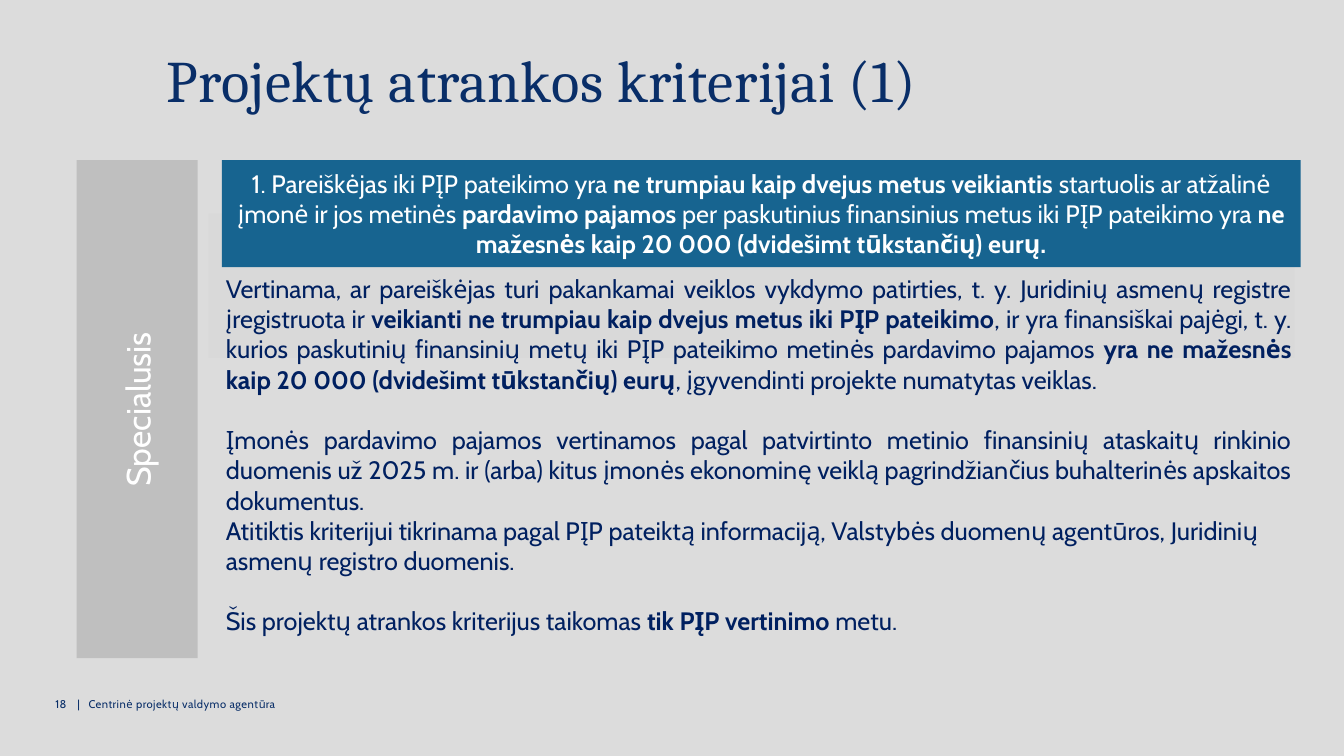
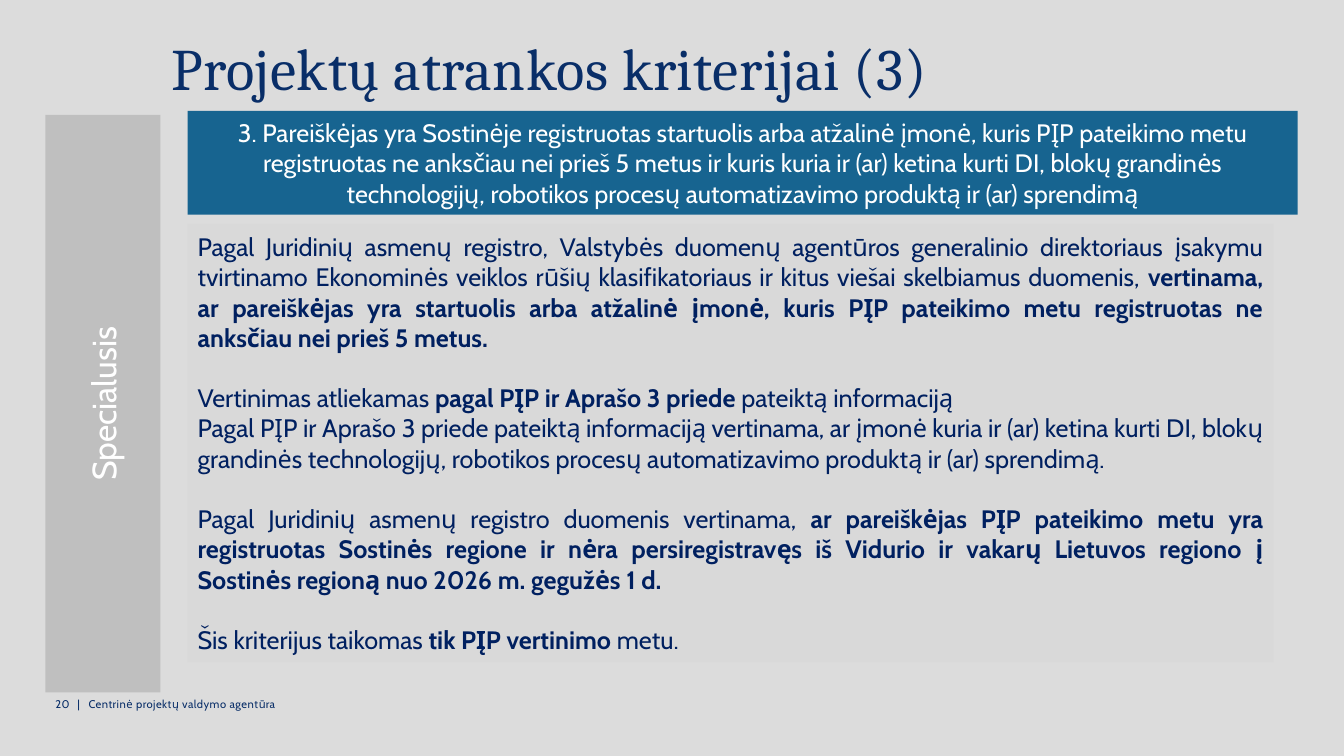
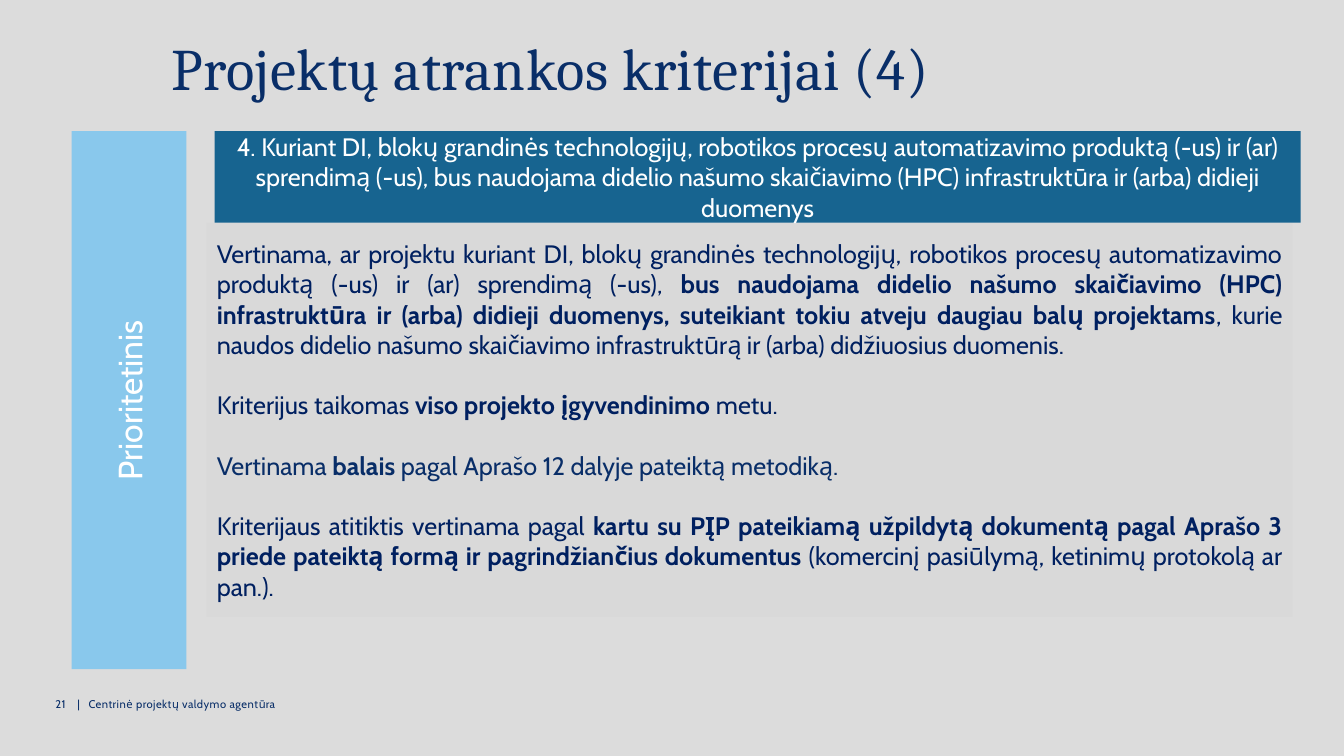
from dataclasses import dataclass

import pptx
import pptx.dml.color
import pptx.enum.shapes
import pptx.enum.text
import pptx.oxml
import pptx.oxml.ns
import pptx.util

Inches = pptx.util.Inches
Pt = pptx.util.Pt
Align = pptx.enum.text.PP_ALIGN
Anchor = pptx.enum.text.MSO_ANCHOR


@dataclass(frozen=True)
class Theme:
    background: str = "DCDCDC"
    panel: str = "D9D9D9"
    banner: str = "176490"
    special: str = "BFBFBF"
    priority: str = "89C8EC"
    navy: str = "092E68"
    ink: str = "002060"
    white: str = "FFFFFF"
    heading_font: str = "Cambria"
    text_font: str = "Cabin"
    title_size: int = 42
    label_size: int = 24
    text_size: int = 18
    footer_size: int = 8
    paragraph_gap: float = 21.6


@dataclass(frozen=True)
class Passage:
    """A paragraph of body text; ** switches bold on and off."""
    text: str
    gap: bool = True
    alignment: Align = Align.JUSTIFY
    color: str = Theme.ink


def rgb(color):
    return pptx.dml.color.RGBColor.from_string(color)


def set_format(target, values):
    for name, value in values.items():
        setattr(target, name, value)


class Deck:
    def __init__(self, theme):
        self.theme = theme
        self.presentation = pptx.Presentation()
        set_format(self.presentation, {
            "slide_width": Inches(13.33), "slide_height": Inches(7.5)})
        fill = self.presentation.slide_master.background.fill
        fill.solid()
        fill.fore_color.rgb = rgb(theme.background)
        self.slide = None

    def new_slide(self):
        layout = self.presentation.slide_layouts[1]
        self.slide = self.presentation.slides.add_slide(layout)

    def place(self, shape, box, anchor):
        """Move a shape to its box, in front of the shapes so far."""
        names = ("left", "top", "width", "height")
        set_format(shape, dict(zip(names, map(Inches, box))))
        self.slide.shapes.element.append(shape.element)
        set_format(shape.text_frame, {
            "word_wrap": True, "vertical_anchor": anchor,
            "auto_size": pptx.enum.text.MSO_AUTO_SIZE.NONE})

    def add_text(self, paragraph, text, size, color, font=None, **layout):
        """Fill a paragraph, with bold between pairs of **."""
        set_format(paragraph, {"space_before": Pt(0), **layout})
        for index, part in enumerate(text.split("**")):
            if part:
                run = paragraph.add_run()
                run.text = part
                set_format(run.font, {
                    "name": font or self.theme.text_font,
                    "size": Pt(size), "bold": index % 2 == 1})
                run.font.color.rgb = rgb(color)

    def track(self, shape, hundredths):
        """Set the letter spacing of all runs in a shape."""
        for properties in shape.element.iter(pptx.oxml.ns.qn("a:rPr")):
            properties.set("spc", str(hundredths))

    def block(self, box, color):
        shape = self.slide.shapes.add_shape(
            pptx.enum.shapes.MSO_SHAPE.RECTANGLE, *map(Inches, box))
        shape.shadow.inherit = False
        shape.fill.solid()
        shape.fill.fore_color.rgb = rgb(color)
        shape.line.fill.background()
        self.place(shape, box, Anchor.MIDDLE)
        return shape

    def banner(self, box, text):
        shape = self.block(box, self.theme.banner)
        self.add_text(shape.text_frame.paragraphs[0], text,
                      self.theme.text_size, self.theme.white,
                      alignment=Align.CENTER)

    def side_label(self, box, text, color):
        shape = self.block(box, color)
        shape.element.txBody.bodyPr.set("vert", "vert270")
        self.add_text(shape.text_frame.paragraphs[0], text,
                      self.theme.label_size, self.theme.white,
                      alignment=Align.CENTER)

    def title(self, box, text):
        shape = self.slide.shapes.title
        self.place(shape, box, Anchor.TOP)
        self.add_text(shape.text_frame.paragraphs[0], text,
                      self.theme.title_size, self.theme.navy,
                      self.theme.heading_font, alignment=Align.LEFT,
                      line_spacing=0.8, space_after=Pt(12))
        self.track(shape, 40)

    def body(self, box, passages, anchor=Anchor.MIDDLE, color=None):
        shape = self.slide.placeholders[1]
        self.place(shape, box, anchor)
        if color:
            shape.fill.solid()
            shape.fill.fore_color.rgb = rgb(color)
        frame = shape.text_frame
        for index, passage in enumerate(passages):
            paragraph = frame.add_paragraph() if index else frame.paragraphs[0]
            properties = paragraph._p.get_or_add_pPr()
            properties.set("marL", "0")
            properties.set("indent", "0")
            properties.append(pptx.oxml.parse_xml(
                f'<a:buNone {pptx.oxml.ns.nsdecls("a")}/>'))
            gap = self.theme.paragraph_gap if index and passage.gap else 0
            self.add_text(paragraph, passage.text, self.theme.text_size,
                          passage.color, alignment=passage.alignment,
                          space_before=Pt(gap))

    def footer(self, number):
        box = (0.45, 6.87, 3.2, 0.4)
        shape = self.slide.shapes.add_textbox(*map(Inches, box))
        self.place(shape, box, Anchor.TOP)
        paragraph = shape.text_frame.paragraphs[0]
        tabs = "".join(f'<a:tab pos="{Inches(stop)}" algn="l"/>'
                       for stop in (0.22, 0.33))
        paragraph._p.get_or_add_pPr().append(pptx.oxml.parse_xml(
            f'<a:tabLst {pptx.oxml.ns.nsdecls("a")}>{tabs}</a:tabLst>'))
        self.add_text(paragraph,
                      f"{number}\t|\tCentrinė projektų valdymo agentūra",
                      self.theme.footer_size, self.theme.navy)
        self.track(shape, 30)


def experience_slide(deck):
    theme = deck.theme
    deck.new_slide()
    deck.block((2.07, 2.12, 10.77, 1.43), theme.panel)
    deck.banner(
        (2.2, 1.59, 10.7, 1.06),
        "1. Pareiškėjas iki PĮP pateikimo yra **ne trumpiau kaip dvejus metus "
        "veikiantis **startuolis ar atžalinė įmonė ir jos metinės **pardavimo "
        "pajamos **per paskutinius finansinius metus iki PĮP pateikimo yra "
        "**ne mažesnės kaip 20 000 (dvidešimt tūkstančių) eurų.**")
    deck.side_label((0.76, 1.59, 1.2, 4.94), "Specialusis", theme.special)
    deck.title((1.55, 0.52, 10.52, 0.85), "Projektų atrankos kriterijai (1)")
    deck.footer(18)
    deck.body((2.14, 2.66, 10.77, 4.04), [
        Passage(
            "Vertinama, ar pareiškėjas turi pakankamai veiklos vykdymo "
            "patirties, t. y. Juridinių asmenų registre įregistruota ir "
            "**veikianti ne trumpiau kaip dvejus metus iki PĮP pateikimo**, "
            "ir yra finansiškai pajėgi, t. y. kurios paskutinių finansinių "
            "metų iki PĮP pateikimo metinės pardavimo pajamos **yra ne "
            "mažesnės kaip 20 000 (dvidešimt tūkstančių) eurų**, "
            "įgyvendinti projekte numatytas veiklas."),
        Passage(
            "Įmonės pardavimo pajamos vertinamos pagal patvirtinto metinio "
            "finansinių ataskaitų rinkinio duomenis už 2025 m. ir (arba) kitus "
            "įmonės ekonominę veiklą pagrindžiančius buhalterinės apskaitos "
            "dokumentus."),
        Passage(
            "Atitiktis kriterijui tikrinama pagal PĮP pateiktą informaciją, "
            "Valstybės duomenų agentūros, Juridinių asmenų registro duomenis.",
            gap=False, alignment=Align.LEFT),
        Passage(
            "Šis projektų atrankos kriterijus taikomas **tik PĮP vertinimo "
            "**metu."),
    ], anchor=Anchor.TOP)


def region_slide(deck):
    theme = deck.theme
    deck.new_slide()
    deck.body((1.86, 2.22, 10.77, 4.35), [
        Passage(
            "Pagal Juridinių asmenų registro, Valstybės duomenų agentūros "
            "generalinio direktoriaus įsakymu tvirtinamo Ekonominės veiklos "
            "rūšių klasifikatoriaus ir kitus viešai skelbiamus duomenis, "
            "**vertinama, ar pareiškėjas yra startuolis arba atžalinė įmonė, "
            "kuris PĮP pateikimo metu registruotas ne anksčiau nei prieš "
            "5 metus.**"),
        Passage(
            "Vertinimas atliekamas **pagal PĮP ir Aprašo 3 priede **pateiktą "
            "informaciją"),
        Passage(
            "Pagal PĮP ir Aprašo 3 priede pateiktą informaciją vertinama, ar "
            "įmonė kuria ir (ar) ketina kurti DI, blokų grandinės "
            "technologijų, robotikos procesų automatizavimo produktą ir (ar) "
            "sprendimą.", gap=False),
        Passage(
            "Pagal Juridinių asmenų registro duomenis vertinama, **ar "
            "pareiškėjas PĮP pateikimo metu yra registruotas Sostinės regione "
            "ir nėra persiregistravęs iš Vidurio ir vakarų Lietuvos regiono į "
            "Sostinės regioną nuo 2026 m. gegužės 1 d.**"),
        Passage("Šis kriterijus taikomas **tik PĮP vertinimo **metu."),
    ], color=theme.panel)
    deck.banner(
        (1.86, 1.1, 11.01, 1.03),
        "3. Pareiškėjas yra Sostinėje registruotas startuolis arba atžalinė "
        "įmonė, kuris PĮP pateikimo metu registruotas ne anksčiau nei prieš "
        "5 metus ir kuris kuria ir (ar) ketina kurti DI, blokų grandinės "
        "technologijų, robotikos procesų automatizavimo produktą ir (ar) "
        "sprendimą")
    deck.side_label((0.45, 1.14, 1.14, 5.73), "Specialusis", theme.special)
    deck.title((1.6, 0.4, 10.52, 0.61), "Projektų atrankos kriterijai (3)")
    deck.footer(20)


def computing_slide(deck):
    theme = deck.theme
    deck.new_slide()
    deck.body((2.05, 2.21, 10.77, 3.91), [
        Passage(
            "Vertinama, ar projektu kuriant DI, blokų grandinės technologijų, "
            "robotikos procesų automatizavimo produktą (-us) ir (ar) sprendimą "
            "(-us), **bus naudojama didelio našumo skaičiavimo (HPC) "
            "infrastruktūra ir (arba) didieji duomenys, suteikiant tokiu "
            "atveju daugiau balų projektams**, kurie naudos didelio našumo "
            "skaičiavimo infrastruktūrą ir (arba) didžiuosius duomenis."),
        Passage("Kriterijus taikomas **viso projekto įgyvendinimo **metu."),
        Passage(
            "Vertinama **balais** pagal Aprašo 12 dalyje pateiktą metodiką.",
            color=theme.navy),
        Passage(
            "Kriterijaus atitiktis vertinama pagal **kartu su PĮP pateikiamą "
            "užpildytą dokumentą pagal Aprašo 3 priede pateiktą formą ir "
            "pagrindžiančius dokumentus **(komercinį pasiūlymą, ketinimų "
            "protokolą ar pan.)."),
    ], color=theme.panel)
    deck.banner(
        (2.13, 1.3, 10.77, 0.91),
        "4. Kuriant DI, blokų grandinės technologijų, robotikos procesų "
        "automatizavimo produktą (-us) ir (ar) sprendimą (-us), bus naudojama "
        "didelio našumo skaičiavimo (HPC) infrastruktūra ir (arba) didieji "
        "duomenys")
    deck.title((1.6, 0.4, 10.52, 0.61), "Projektų atrankos kriterijai (4)")
    deck.footer(21)
    deck.side_label((0.71, 1.3, 1.14, 5.34), "Prioritetinis", theme.priority)


def main():
    deck = Deck(Theme())
    experience_slide(deck)
    region_slide(deck)
    computing_slide(deck)
    deck.presentation.save("out.pptx")


if __name__ == "__main__":
    main()
